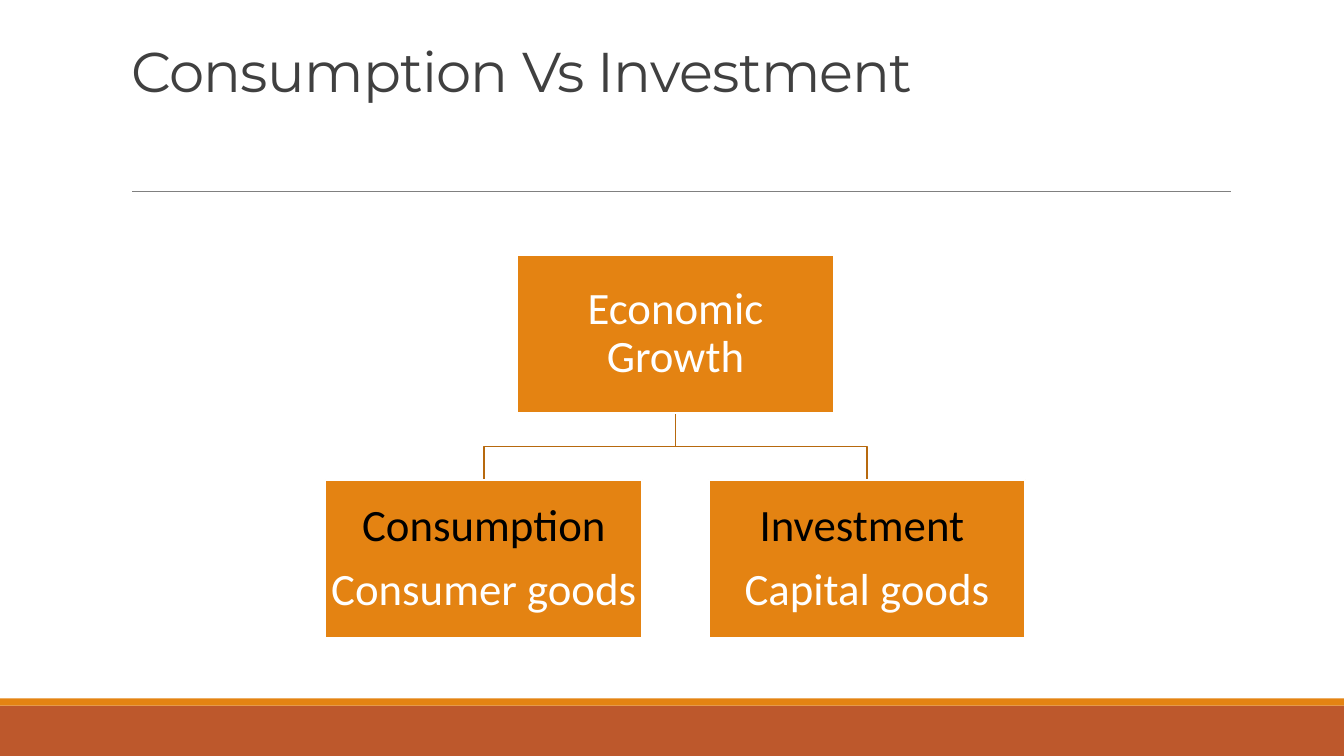
import lxml.etree
import pptx
import pptx.dml.color
import pptx.enum.shapes
import pptx.enum.text
import pptx.oxml.ns
import pptx.util
from dataclasses import dataclass

PX = 9144  # EMU in one px, 100 px to the inch


@dataclass(frozen=True)
class Theme:
    orange: str = "E48312"
    rust: str = "BD582C"
    branch: str = "B7690E"
    rule: str = "808080"
    title: str = "404040"
    light: str = "FFFFFF"
    dark: str = "000000"
    title_font: str = "Montserrat"
    body_font: str = "Calibri"
    title_size: int = 40
    body_size: int = 32


theme = Theme()
rgb = pptx.dml.color.RGBColor.from_string


def write(shape, lines, *, font, size, align, anchor, spacing, after=0, inset=None, tracking=None):
    """Fill a shape with one paragraph per (text, colour) pair."""
    frame = shape.text_frame
    frame.word_wrap = True
    frame.auto_size = pptx.enum.text.MSO_AUTO_SIZE.NONE
    frame.vertical_anchor = anchor
    if inset is not None:
        frame.margin_left = frame.margin_right = inset * PX
        frame.margin_top = frame.margin_bottom = inset * PX
    for index, (text, color) in enumerate(lines):
        paragraph = frame.add_paragraph() if index else frame.paragraphs[0]
        paragraph.alignment = align
        paragraph.line_spacing = spacing
        paragraph.space_before = pptx.util.Pt(0)
        paragraph.space_after = pptx.util.Pt(after)
        run = paragraph.add_run()
        run.text = text
        run.font.name = font
        run.font.size = pptx.util.Pt(size)
        run.font.color.rgb = rgb(color)
        if tracking is not None:
            run._r.get_or_add_rPr().set("spc", str(tracking))


def add_block(slide, left, top, width, height, fill, outline=None):
    block = slide.shapes.add_shape(
        pptx.enum.shapes.MSO_SHAPE.RECTANGLE, left * PX, top * PX, width * PX, height * PX)
    block.shadow.inherit = False
    block.fill.solid()
    block.fill.fore_color.rgb = rgb(fill)
    if outline:
        block.line.color.rgb = rgb(outline)
        block.line.width = pptx.util.Pt(1.25)
    else:
        block.line.fill.background()
    return block


presentation = pptx.Presentation()
presentation.slide_width = 1333 * PX
presentation.slide_height = 750 * PX
slide = presentation.slides.add_slide(presentation.slide_layouts[5])

# Footer bands and the rule under the title
add_block(slide, 0, 700, 1333, 50, theme.rust)
add_block(slide, 0, 693, 1333, 7, theme.orange)
title_rule = slide.shapes.add_connector(
    pptx.enum.shapes.MSO_CONNECTOR.STRAIGHT, 131 * PX, 190 * PX, 1221 * PX, 190 * PX)
title_rule.line.color.rgb = rgb(theme.rule)
title_rule.line.width = pptx.util.Pt(0.5)
lxml.etree.SubElement(title_rule._element.spPr, pptx.oxml.ns.qn("a:effectLst"))

heading = slide.shapes.title
heading.left, heading.top, heading.width, heading.height = 120 * PX, 31 * PX, 1100 * PX, 77 * PX
write(heading, [("Consumption Vs Investment", theme.title)],
      font=theme.title_font, size=theme.title_size, spacing=0.85, tracking=-50,
      align=pptx.enum.text.PP_ALIGN.LEFT, anchor=pptx.enum.text.MSO_ANCHOR.BOTTOM)

# Tree: one root above two children, spread evenly around the root's centre
NODE_WIDTH, NODE_HEIGHT = 314, 157
ROOT_CENTER, CHILD_OFFSET = 670, 190
ROOT_TOP, CHILD_TOP = 253, 476
root_bottom = ROOT_TOP + NODE_HEIGHT
fork = (root_bottom + CHILD_TOP) // 2
child_centers = (ROOT_CENTER - CHILD_OFFSET, ROOT_CENTER + CHILD_OFFSET)

for center in child_centers:
    outline = slide.shapes.build_freeform(ROOT_CENTER, root_bottom, scale=PX)
    outline.add_line_segments(
        [(ROOT_CENTER, fork), (center, fork), (center, CHILD_TOP)], close=False)
    branch = outline.convert_to_shape()
    branch.shadow.inherit = False
    branch.fill.background()
    branch.line.color.rgb = rgb(theme.branch)
    branch.line.width = pptx.util.Pt(1.25)

nodes = [
    (ROOT_CENTER, ROOT_TOP, [("Economic Growth", theme.light)]),
    (child_centers[0], CHILD_TOP, [("Consumption", theme.dark), ("Consumer goods", theme.light)]),
    (child_centers[1], CHILD_TOP, [("Investment ", theme.dark), ("Capital goods", theme.light)]),
]
for center, top, lines in nodes:
    node = add_block(slide, center - NODE_WIDTH // 2, top, NODE_WIDTH, NODE_HEIGHT,
                     theme.orange, outline=theme.light)
    write(node, lines, font=theme.body_font, size=theme.body_size, spacing=0.9, after=11, inset=2,
          align=pptx.enum.text.PP_ALIGN.CENTER, anchor=pptx.enum.text.MSO_ANCHOR.MIDDLE)

presentation.save("out.pptx")
